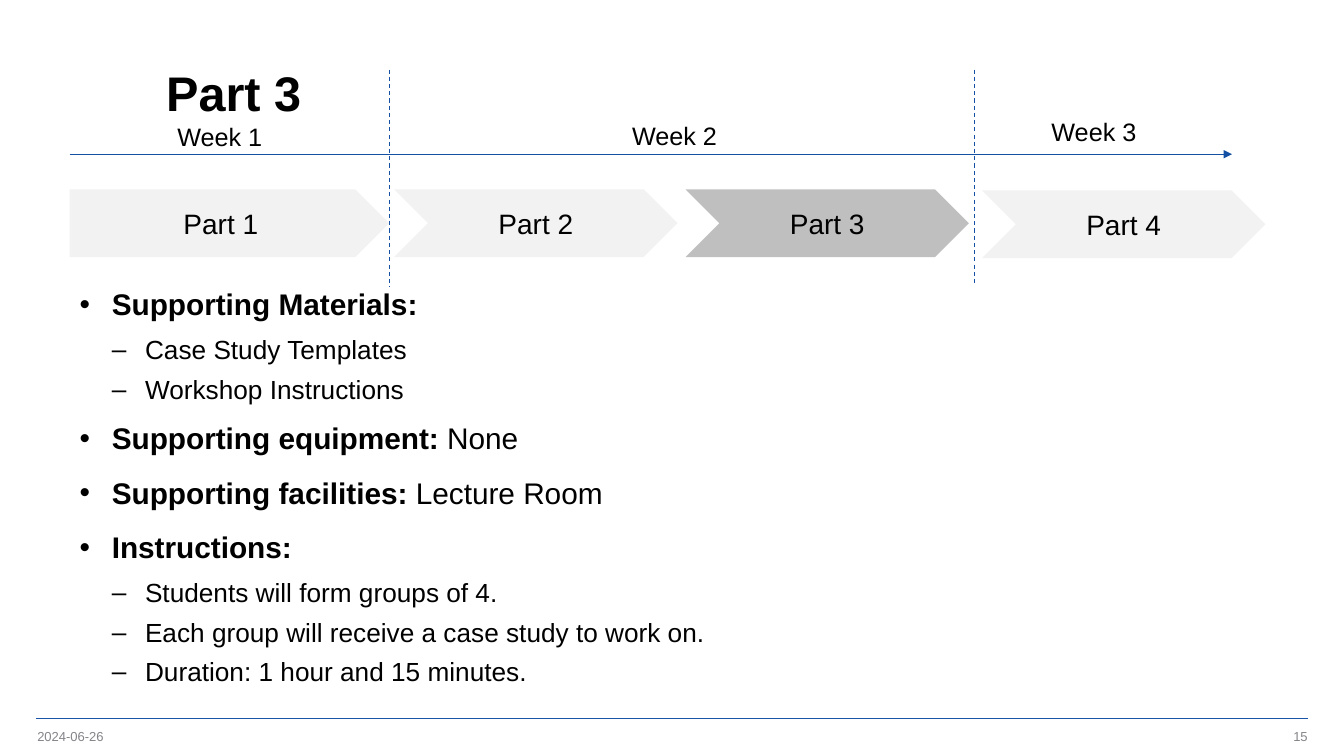
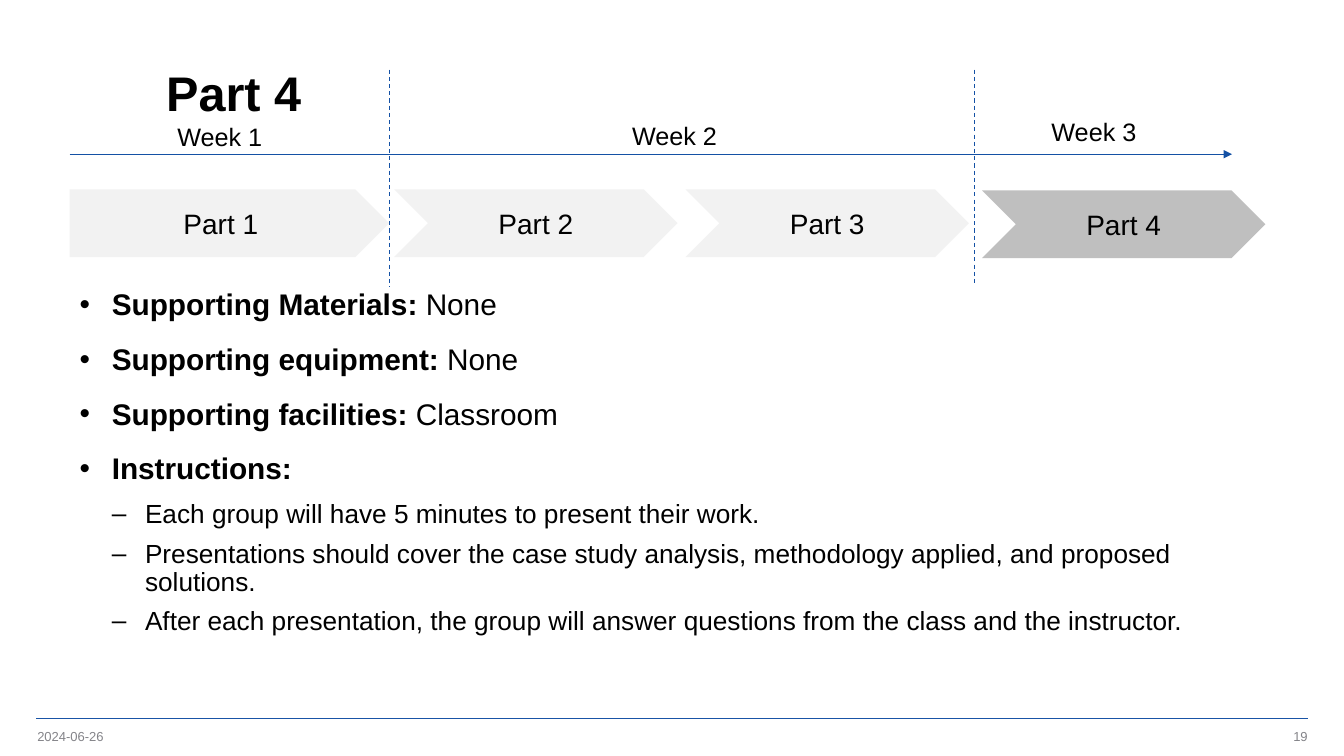
from dataclasses import dataclass
from typing import NamedTuple

from lxml.etree import SubElement
from pptx import Presentation
from pptx.dml.color import RGBColor
from pptx.enum.dml import MSO_LINE
from pptx.enum.shapes import MSO_CONNECTOR, MSO_SHAPE
from pptx.enum.text import MSO_ANCHOR, PP_ALIGN
from pptx.oxml.ns import qn
from pptx.util import Emu, Pt

# Shared look
FONT = "Arial"
BLACK, GREY, RULE, LINE = "000000", "848489", "1954A6", "1451A5"
PALE, ACTIVE = "F2F2F2", "BFBFBF"
SCALE = 9144  # EMU in one px, 100 px to the inch
DATE = "2024-06-26"


class Box(NamedTuple):
    left: int
    top: int
    width: int
    height: int


class Level(NamedTuple):
    mark: str
    left: int
    hang: int
    size: float


class Step(NamedTuple):
    text: str
    kind: MSO_SHAPE
    box: Box


class Week(NamedTuple):
    text: str
    left: int
    top: int


class Stroke(NamedTuple):
    start: tuple[int, int]
    end: tuple[int, int]
    color: str = LINE
    width: float = 0.75
    dash: bool = False
    arrow: bool = False


@dataclass(frozen=True)
class Item:
    bold: str = ""
    plain: str = ""
    level: int = 0


@dataclass(frozen=True)
class Page:
    title: str
    number: int
    items: list[Item]


LEVELS = [Level("•", 32, 32, 21.3), Level("–", 65, 33, 18.7)]
# Space before a paragraph, by the level above it and its own level
GAPS = {(0, 0): 16, (0, 1): 10.7, (1, 0): 13.3, (1, 1): 8}

STEPS = [
    Step("Part 1", MSO_SHAPE.PENTAGON, Box(69, 188, 317, 67)),
    Step("Part 2", MSO_SHAPE.CHEVRON, Box(391, 188, 281, 67)),
    Step("Part 3", MSO_SHAPE.CHEVRON, Box(680, 188, 281, 67)),
    Step("Part 4", MSO_SHAPE.CHEVRON, Box(974, 189, 281, 67)),
]
WEEKS = [Week("Week 1", 166, 115), Week("Week 2", 617, 114), Week("Week 3", 1033, 110)]
STROKES = [
    Stroke((36, 713), (1297, 713), RULE, 1),
    Stroke((69, 153), (1222, 153), arrow=True),
    Stroke((386, 69), (386, 284), dash=True),
    Stroke((967, 69), (967, 283), dash=True),
]

PAGES = [
    Page("Part 3", 15, [
        Item("Supporting Materials:"),
        Item(plain="Case Study Templates", level=1),
        Item(plain="Workshop Instructions", level=1),
        Item("Supporting equipment: ", "None"),
        Item("Supporting facilities: ", "Lecture Room"),
        Item("Instructions:"),
        Item(plain="Students will form groups of 4.", level=1),
        Item(plain="Each group will receive a case study to work on.", level=1),
        Item(plain="Duration: 1 hour and 15 minutes.", level=1),
    ]),
    Page("Part 4", 19, [
        Item("Supporting Materials: ", "None"),
        Item("Supporting equipment: ", "None"),
        Item("Supporting facilities: ", "Classroom"),
        Item("Instructions:"),
        Item(plain="Each group will have 5 minutes to present their work.", level=1),
        Item(plain="Presentations should cover the case study analysis, "
                   "methodology applied, and proposed solutions.", level=1),
        Item(plain="After each presentation, the group will answer questions "
                   "from the class and the instructor.", level=1),
    ]),
]


def px(size: int) -> Emu:
    return Emu(size * SCALE)


def tint(code: str) -> RGBColor:
    return RGBColor.from_string(code)


def place(box: Box) -> list[Emu]:
    return [px(side) for side in box]


def add_run(para, text: str, size: float, color: str = BLACK, bold: bool = False) -> None:
    run = para.add_run()
    run.text = text
    font = run.font
    font.name, font.size, font.bold = FONT, Pt(size), bold
    font.color.rgb = tint(color)


def add_frame(slide, box: Box, middle: bool = False, wrap: bool = True, pad: bool = True):
    frame = slide.shapes.add_textbox(*place(box)).text_frame
    frame.word_wrap = wrap
    frame.vertical_anchor = MSO_ANCHOR.MIDDLE if middle else MSO_ANCHOR.TOP
    if not pad:
        frame.margin_left = frame.margin_right = 0
        frame.margin_top = frame.margin_bottom = 0
    return frame


def add_line(slide, stroke: Stroke) -> None:
    ends = [px(side) for side in stroke.start + stroke.end]
    link = slide.shapes.add_connector(MSO_CONNECTOR.STRAIGHT, *ends)
    link.line.color.rgb = tint(stroke.color)
    link.line.width = Pt(stroke.width)
    if stroke.dash:
        link.line.dash_style = MSO_LINE.DASH
    if stroke.arrow:
        SubElement(link.line._get_or_add_ln(), qn("a:tailEnd"), type="triangle")
    SubElement(link._element.spPr, qn("a:effectLst"))


def add_step(slide, step: Step, active: bool) -> None:
    shape = slide.shapes.add_shape(step.kind, *place(step.box))
    shape.shadow.inherit = False
    shape.fill.solid()
    shape.fill.fore_color.rgb = tint(ACTIVE if active else PALE)
    shape.line.fill.background()
    shape.adjustments[0] = 0.5
    shape.text_frame.vertical_anchor = MSO_ANCHOR.MIDDLE
    para = shape.text_frame.paragraphs[0]
    para.alignment = PP_ALIGN.CENTER
    add_run(para, step.text, 20)


def set_mark(para, level: Level) -> None:
    props = para._p.get_or_add_pPr()
    props.set("marL", str(px(level.left)))
    props.set("indent", str(-px(level.hang)))
    color = SubElement(props, qn("a:buClr"))
    SubElement(color, qn("a:srgbClr"), val=BLACK)
    SubElement(props, qn("a:buFont"), typeface=FONT)
    SubElement(props, qn("a:buChar"), char=level.mark)


def add_list(slide, items: list[Item]) -> None:
    frame = add_frame(slide, Box(69, 283, 1189, 372))
    for i, item in enumerate(items):
        para = frame.add_paragraph() if i else frame.paragraphs[0]
        level = LEVELS[item.level]
        set_mark(para, level)
        para.level = item.level
        para.line_spacing = 0.9
        if i:
            para.space_before = Pt(GAPS[items[i - 1].level, item.level])
        for text, bold in ((item.bold, True), (item.plain, False)):
            if text:
                add_run(para, text, level.size, bold=bold)


def add_title(slide, text: str) -> None:
    para = add_frame(slide, Box(155, 37, 1101, 98), middle=True).paragraphs[0]
    para.line_spacing = 1.18
    add_run(para, text, 34.7, bold=True)


def add_foot(slide, number: int) -> None:
    for left, text, align in ((37, DATE, PP_ALIGN.LEFT), (997, str(number), PP_ALIGN.RIGHT)):
        frame = add_frame(slide, Box(left, 722, 300, 17), middle=True, pad=False)
        para = frame.paragraphs[0]
        para.alignment = align
        add_run(para, text, 9.3, GREY)


def add_page(deck, page: Page) -> None:
    slide = deck.slides.add_slide(deck.slide_layouts[6])
    add_title(slide, page.title)
    add_foot(slide, page.number)
    add_list(slide, page.items)
    # Timeline
    for stroke in STROKES:
        add_line(slide, stroke)
    for week in WEEKS:
        frame = add_frame(slide, Box(week.left, week.top, 105, 40), wrap=False)
        add_run(frame.paragraphs[0], week.text, 18)
    # Course parts, the current one darker
    for step in STEPS:
        add_step(slide, step, step.text == page.title)


def main() -> None:
    deck = Presentation()
    deck.slide_width, deck.slide_height = px(1333), px(750)
    for page in PAGES:
        add_page(deck, page)
    deck.save("out.pptx")


if __name__ == "__main__":
    main()
